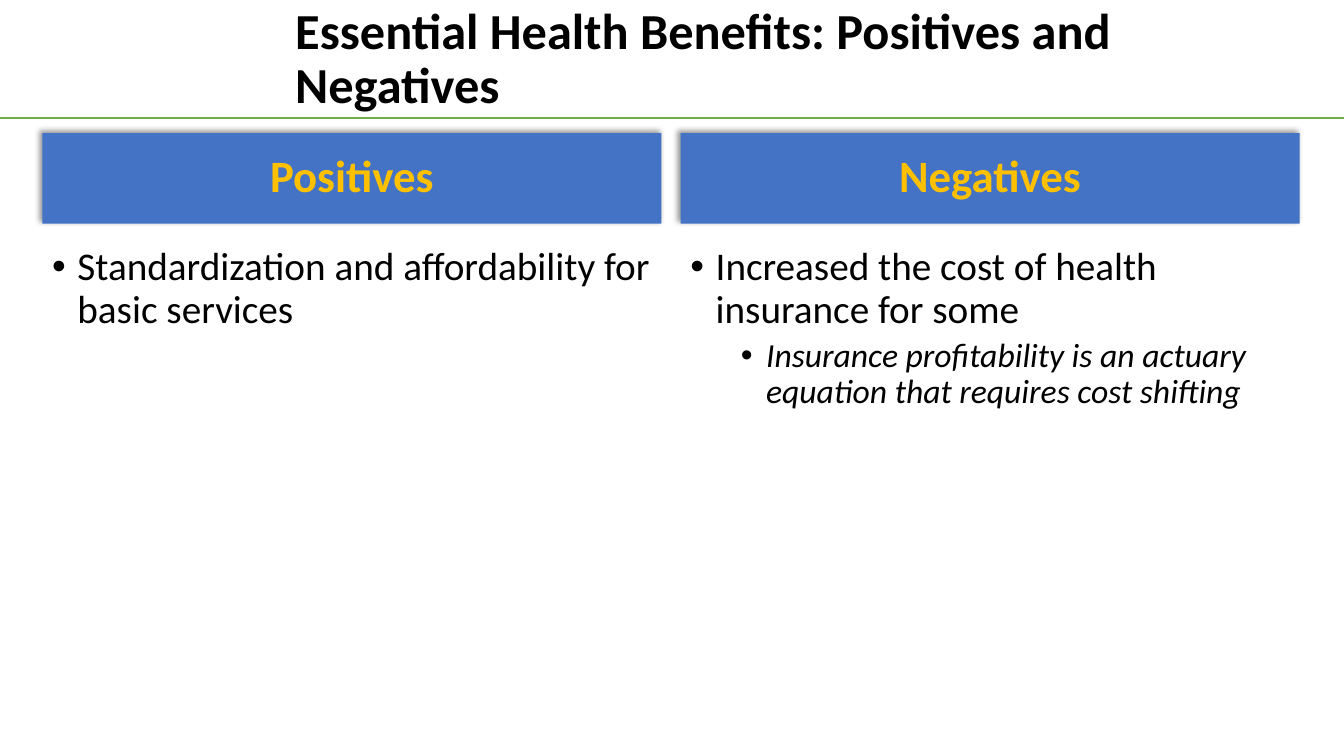
import lxml.etree
import pptx
import pptx.dml.color
import pptx.enum.shapes
import pptx.enum.text
import pptx.oxml
import pptx.oxml.ns
import pptx.util

EMU_PER_PX = 9144  # 100 px to the inch
SLIDE_WIDTH, SLIDE_HEIGHT = 1333, 750
FONT = "Calibri"
COLORS = {
    "text": "000000",
    "header_fill": "4472C4",
    "header_text": "FFC000",
    "rule": "70AD47",
    "shadow": "000000",
}
HEADER_TOP, HEADER_HEIGHT = 132, 90
BODY_TOP, BODY_HEIGHT = 240, 437
COLUMN_LEFT, COLUMN_WIDTH, COLUMN_STEP = 42, 614, 633
HANGING_INDENT = 25
BULLET_LEFT = [25, 75]
BULLET_SIZE = [28, 24]

# Each column: heading, then bullets as (level, text)
COLUMNS = [
    ("Positives", [
        (0, "Standardization and affordability for basic services"),
    ]),
    ("Negatives", [
        (0, "Increased the cost of health insurance for some"),
        (1, "Insurance profitability is an actuary equation that requires cost shifting"),
    ]),
]


def px(value):
    return pptx.util.Emu(value * EMU_PER_PX)


def color(name):
    return pptx.dml.color.RGBColor.from_string(COLORS[name])


def add_run(paragraph, text, size, color_name, bold=False, italic=False):
    paragraph.line_spacing = 0.9
    run = paragraph.add_run()
    run.text = text
    run.font.name = FONT
    run.font.size = pptx.util.Pt(size)
    run.font.bold = bold
    run.font.italic = italic
    run.font.color.rgb = color(color_name)


def add_bullet(paragraph, level):
    paragraph.level = level
    properties = paragraph._p.get_or_add_pPr()
    properties.set("marL", str(px(BULLET_LEFT[level])))
    properties.set("indent", str(-px(HANGING_INDENT)))
    qn = pptx.oxml.ns.qn
    lxml.etree.SubElement(properties, qn("a:buFont"), typeface="Arial")
    lxml.etree.SubElement(properties, qn("a:buChar"), char="•")


def add_shadow(shape):
    """Give the shape a soft shadow towards its upper left."""
    shape.shadow.inherit = False
    effects = shape._element.spPr.find(pptx.oxml.ns.qn("a:effectLst"))
    effects.append(pptx.oxml.parse_xml(
        f'<a:outerShdw {pptx.oxml.ns.nsdecls("a")} blurRad="{pptx.util.Pt(4)}" '
        f'dist="{pptx.util.Pt(3)}" dir="{225 * 60000}" algn="br" rotWithShape="0">'
        f'<a:srgbClr val="{COLORS["shadow"]}"><a:alpha val="40000"/></a:srgbClr>'
        '</a:outerShdw>'))


def add_text_box(slide, left, top, width, height):
    shape = slide.shapes.add_textbox(px(left), px(top), px(width), px(height))
    shape.text_frame.word_wrap = True
    return shape.text_frame


def add_title(slide, text):
    frame = add_text_box(slide, 283, 20, 1006, 80)
    frame.vertical_anchor = pptx.enum.text.MSO_ANCHOR.MIDDLE
    add_run(frame.paragraphs[0], text, 36, "text", bold=True)


def add_rule(slide, y):
    """Draw a line across the whole slide."""
    line = slide.shapes.add_connector(
        pptx.enum.shapes.MSO_CONNECTOR.STRAIGHT, 0, px(y), px(SLIDE_WIDTH), px(y))
    line.line.color.rgb = color("rule")
    line.line.width = pptx.util.Pt(1.25)
    lxml.etree.SubElement(line._element.spPr, pptx.oxml.ns.qn("a:effectLst"))


def add_header(slide, left, text):
    shape = slide.shapes.add_shape(
        pptx.enum.shapes.MSO_SHAPE.RECTANGLE,
        px(left), px(HEADER_TOP), px(COLUMN_WIDTH), px(HEADER_HEIGHT))
    shape.fill.solid()
    shape.fill.fore_color.rgb = color("header_fill")
    shape.line.fill.background()
    add_shadow(shape)
    frame = shape.text_frame
    frame.word_wrap = True
    frame.vertical_anchor = pptx.enum.text.MSO_ANCHOR.MIDDLE
    paragraph = frame.paragraphs[0]
    paragraph.alignment = pptx.enum.text.PP_ALIGN.CENTER
    add_run(paragraph, text, 32, "header_text", bold=True)


def add_bullet_list(slide, left, bullets):
    frame = add_text_box(slide, left, BODY_TOP, COLUMN_WIDTH, BODY_HEIGHT)
    for index, (level, text) in enumerate(bullets):
        paragraph = frame.add_paragraph() if index else frame.paragraphs[0]
        add_bullet(paragraph, level)
        if index:
            paragraph.space_before = pptx.util.Pt(5)
        add_run(paragraph, text, BULLET_SIZE[level], "text", italic=level > 0)


def main():
    presentation = pptx.Presentation()
    presentation.slide_width = px(SLIDE_WIDTH)
    presentation.slide_height = px(SLIDE_HEIGHT)
    slide = presentation.slides.add_slide(presentation.slide_layouts[6])
    add_rule(slide, 117)
    for index, (heading, bullets) in enumerate(COLUMNS):
        left = COLUMN_LEFT + index * COLUMN_STEP
        add_header(slide, left, heading)
        add_bullet_list(slide, left, bullets)
    add_title(slide, "Essential Health Benefits: Positives and Negatives")
    presentation.save("out.pptx")


if __name__ == "__main__":
    main()
